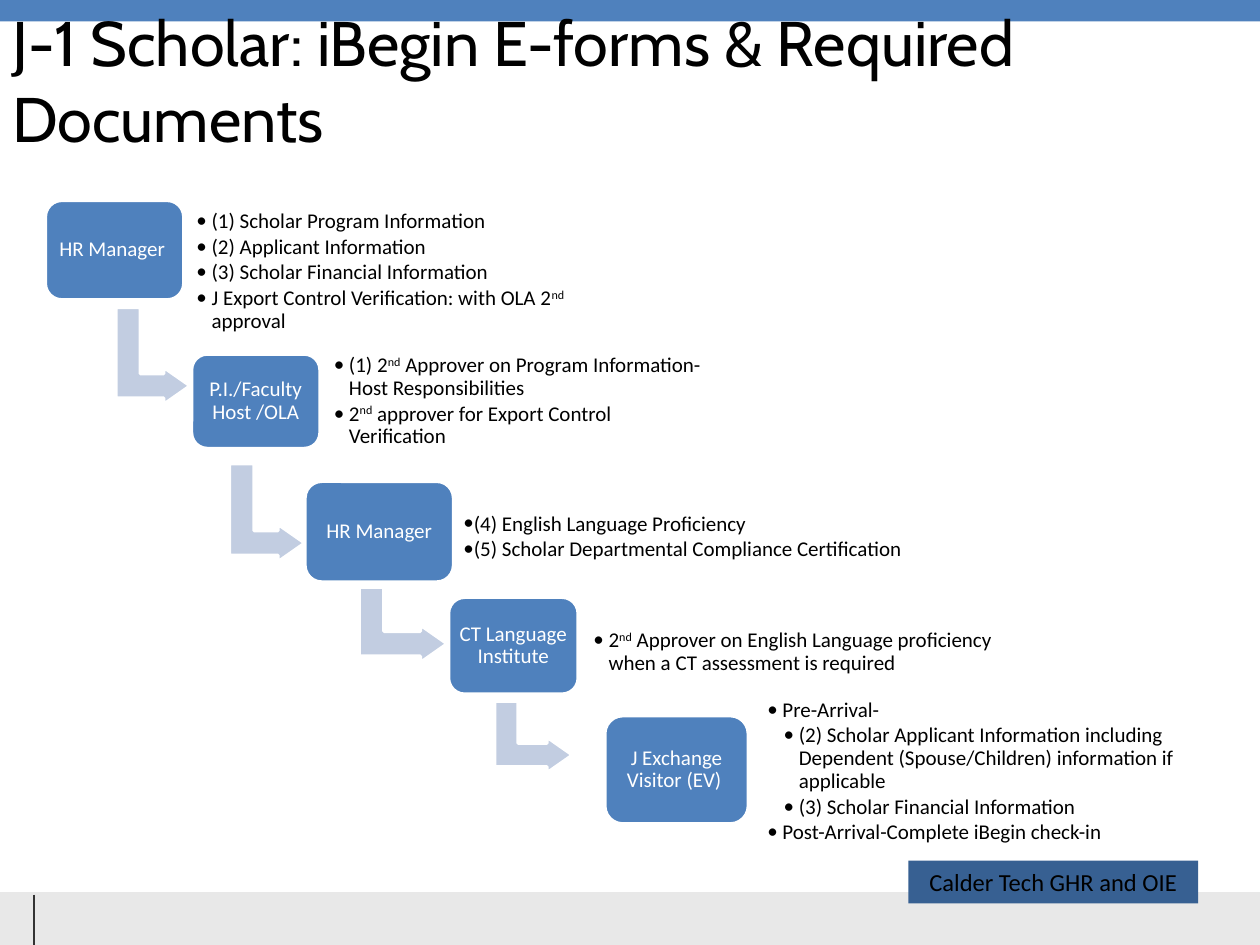
from lxml import etree
from pptx import Presentation
from pptx.dml.color import RGBColor
from pptx.enum.shapes import MSO_CONNECTOR as Line, MSO_SHAPE as Shape
from pptx.enum.text import MSO_ANCHOR as Anchor, MSO_AUTO_SIZE as AutoSize, PP_ALIGN as Align
from pptx.oxml.ns import qn
from pptx.util import Inches, Pt

BLUE = RGBColor(0x4F, 0x81, 0xBD)
NAVY = RGBColor(0x37, 0x60, 0x92)
PALE_BLUE = RGBColor(0xC2, 0xCD, 0xE1)
GREY = RGBColor(0xE8, 0xE8, 0xE8)
DARK = RGBColor(0x33, 0x33, 0x33)
BLACK = RGBColor(0, 0, 0)
WHITE = RGBColor(0xFF, 0xFF, 0xFF)

# Each step: label, label box, arrow to the next step, list box, (level, item)
# Boxes are left, top, width, height in inches; ^ encloses superscript
STEPS = [
    ("HR Manager ", (0.36, 1.59, 1.1, 0.79), (0.83, 2.53, 0.77, 0.59),
     (1.51, 1.44, 3.04, 1.43),
     [(1, "(1) Scholar Program Information"),
      (1, "(2) Applicant Information"),
      (1, "(3) Scholar Financial Information"),
      (1, "J Export Control Verification: with OLA 2^nd^ approval")]),
    ("P.I./Faculty Host /OLA", (1.52, 2.81, 1.02, 0.75), (1.73, 3.77, 0.78, 0.6),
     (2.6, 2.77, 3.04, 0.83),
     [(1, "(1) 2^nd^ Approver on Program Information- Host Responsibilities"),
      (1, "2^nd^ approver for Export Control Verification")]),
    ("HR Manager", (2.42, 3.82, 1.18, 0.8), (2.9, 4.61, 0.6, 0.7),
     (3.58, 4, 4.5, 0.5),
     [(0, "(4) English Language Proficiency"),
      (0, "(5) Scholar Departmental Compliance Certification")]),
    ("CT Language Institute", (3.56, 4.74, 1.03, 0.77), (3.95, 5.54, 0.57, 0.62),
     (4.66, 4.87, 3.45, 0.61),
     [(1, "2^nd^ Approver on English Language proficiency when a CT assessment is required")]),
    ("J Exchange Visitor (EV) ", (4.8, 5.68, 1.14, 0.86), None,
     (6.04, 5.44, 3.48, 1.37),
     [(1, "Pre-Arrival-"),
      (2, "(2) Scholar Applicant Information including Dependent "
          "(Spouse/Children) information if applicable"),
      (2, "(3) Scholar Financial Information"),
      (1, "Post-Arrival-Complete iBegin check-in")]),
]
# Left margin and first-line indent in inches for each list level
INDENTS = {0: (0, -0.1), 1: (0.12, -0.12), 2: (0.25, -0.12)}


def inches(box):
    return [Inches(length) for length in box]


def set_font(paragraph, size, color, name="Calibri"):
    font = paragraph.font
    font.size, font.name = Pt(size), name
    font.color.rgb = color


def set_insets(frame, inset):
    frame.margin_left = frame.margin_right = Inches(inset)
    frame.margin_top = frame.margin_bottom = Inches(inset)


def add_block(slide, kind, box, fill, outline=None):
    block = slide.shapes.add_shape(kind, *inches(box))
    block.shadow.inherit = False
    block.fill.solid()
    block.fill.fore_color.rgb = fill
    if outline is None:
        block.line.fill.background()
    else:
        block.line.color.rgb = outline
        block.line.width = Pt(2)
    return block


def add_frame(slide):
    """Top band, footer band with its rule, and the department tag."""
    add_block(slide, Shape.RECTANGLE, (0, 7.08, 10, 0.42), GREY)
    rule = slide.shapes.add_connector(Line.STRAIGHT, *inches((0.27, 7.1, 0.27, 7.5)))
    rule.line.color.rgb = DARK
    rule.line.width = Pt(0.75)
    etree.SubElement(rule._element.spPr, qn("a:effectLst"))

    tag = add_block(slide, Shape.RECTANGLE, (7.21, 6.83, 2.3, 0.34), NAVY)
    frame = tag.text_frame
    frame.word_wrap = False
    frame.auto_size = AutoSize.NONE
    frame.vertical_anchor = Anchor.MIDDLE
    set_insets(frame, 0.02)
    frame.text = "Calder Tech GHR and OIE"
    frame.paragraphs[0].alignment = Align.CENTER
    set_font(frame.paragraphs[0], 14, BLACK)

    add_block(slide, Shape.RECTANGLE, (0, 0, 10, 0.17), BLUE)


def add_title(slide, box):
    frame = slide.shapes.add_textbox(*inches(box)).text_frame
    frame.word_wrap = True
    frame.vertical_anchor = Anchor.MIDDLE
    frame.text = "J-1 Scholar: iBegin E-forms & Required Documents"
    set_font(frame.paragraphs[0], 36, BLACK, "Cabin")


def add_label(slide, box, label):
    frame = add_block(slide, Shape.ROUNDED_RECTANGLE, box, BLUE, WHITE).text_frame
    frame.word_wrap = True
    frame.vertical_anchor = Anchor.MIDDLE
    set_insets(frame, 0.05)
    frame.text = label
    paragraph = frame.paragraphs[0]
    paragraph.alignment = Align.CENTER
    paragraph.line_spacing = 0.9
    set_font(paragraph, 12, WHITE)


def add_arrow(slide, box):
    arrow = add_block(slide, Shape.BENT_UP_ARROW, box, PALE_BLUE, WHITE)
    arrow.rotation = 90
    for index, value in enumerate((0.328, 0.25, 0.358)):
        arrow.adjustments[index] = value


def add_item(paragraph, level, item):
    paragraph.level = level
    set_font(paragraph, 12, BLACK)
    if level:
        paragraph.line_spacing = 0.9
        paragraph.space_after = Pt(1.8)
    # Bullet goes before the default run properties
    properties = paragraph._p.get_or_add_pPr()
    margin, indent = INDENTS[level]
    properties.set("marL", str(Inches(margin)))
    properties.set("indent", str(Inches(indent)))
    defaults = properties.find(qn("a:defRPr"))
    defaults.addprevious(etree.Element(qn("a:buFont"), typeface="Calibri"))
    defaults.addprevious(etree.Element(qn("a:buChar"), char="•"))
    for index, part in enumerate(item.split("^")):
        run = paragraph.add_run()
        run.text = part
        if index % 2:
            run._r.get_or_add_rPr().set("baseline", "30000")


def add_list(slide, box, items):
    frame = slide.shapes.add_textbox(*inches(box)).text_frame
    frame.word_wrap = True
    if items[0][0]:
        frame.vertical_anchor = Anchor.MIDDLE
        set_insets(frame, 0.05)
    for index, (level, item) in enumerate(items):
        paragraph = frame.add_paragraph() if index else frame.paragraphs[0]
        add_item(paragraph, level, item)


def main():
    deck = Presentation()
    deck.slide_width, deck.slide_height = Inches(10), Inches(7.5)
    slide = deck.slides.add_slide(deck.slide_layouts[6])
    add_frame(slide)
    add_title(slide, (0, 0.17, 9, 0.92))
    for label, label_box, arrow_box, list_box, items in STEPS:
        if arrow_box:
            add_arrow(slide, arrow_box)
        add_label(slide, label_box, label)
        add_list(slide, list_box, items)
    deck.save("out.pptx")


if __name__ == "__main__":
    main()
